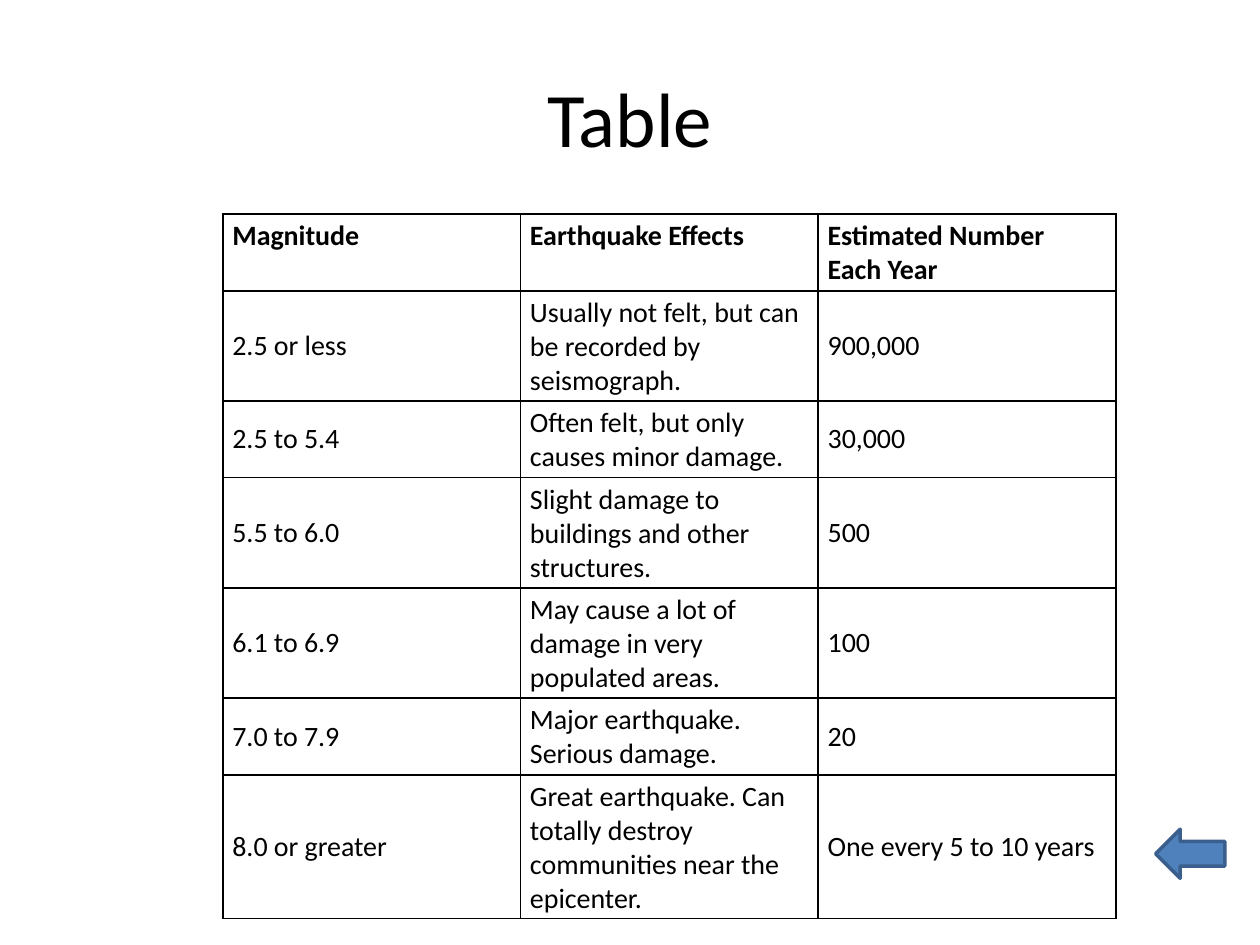
from dataclasses import dataclass

from lxml import etree
from pptx import Presentation
from pptx.dml.color import RGBColor
from pptx.enum import shapes, text
from pptx.oxml import ns
from pptx.util import Pt

FONT = "Calibri"
BLACK = "000000"
TABLE_LEFT, TABLE_TOP = 127.4, 122.4
COLUMN_WIDTH = 170.1
BORDER_WIDTH = 1


@dataclass
class EffectRow:
    magnitude: str
    effects: str
    yearly_count: str
    height: float
    header: bool = False


ROWS = [
    EffectRow("Magnitude", "Earthquake Effects", "Estimated Number\nEach Year", 39, header=True),
    EffectRow("2.5 or less", "Usually not felt, but can be recorded by seismograph.", "900,000", 56),
    EffectRow("2.5 to 5.4", "Often felt, but only causes minor damage.", "30,000", 39),
    EffectRow("5.5 to 6.0", "Slight damage to buildings and other structures.", "500", 56),
    EffectRow("6.1 to 6.9", "May cause a lot of damage in very populated areas.", "100", 56),
    EffectRow("7.0 to 7.9", "Major earthquake. Serious damage.", "20", 39),
    EffectRow("8.0 or greater", "Great earthquake. Can totally destroy communities near the epicenter.",
              "One every 5 to 10 years", 73),
]


def color(value: str) -> RGBColor:
    return RGBColor.from_string(value)


def add_text(paragraph, content: str, size: float, bold: bool = False) -> None:
    """Add one run per line, with line breaks between them."""
    for index, line in enumerate(content.split("\n")):
        if index:
            paragraph.add_line_break()
        run = paragraph.add_run()
        run.text = line
        run.font.name = FONT
        run.font.size = Pt(size)
        run.font.bold = bold
        run.font.color.rgb = color(BLACK)


def add_borders(cell) -> None:
    """Insert the four edge lines ahead of the cell's fill, as the schema orders them."""
    properties = cell._tc.get_or_add_tcPr()
    for position, edge in enumerate(("lnL", "lnR", "lnT", "lnB")):
        line = etree.Element(ns.qn(f"a:{edge}"), w=str(Pt(BORDER_WIDTH)))
        fill = etree.SubElement(line, ns.qn("a:solidFill"))
        etree.SubElement(fill, ns.qn("a:srgbClr"), val=BLACK)
        properties.insert(position, line)


def draw_title(slide, content: str) -> None:
    title = slide.shapes.add_textbox(Pt(36), Pt(21.6), Pt(648), Pt(90))
    frame = title.text_frame
    frame.word_wrap = True
    frame.vertical_anchor = text.MSO_ANCHOR.MIDDLE
    paragraph = frame.paragraphs[0]
    paragraph.alignment = text.PP_ALIGN.CENTER
    add_text(paragraph, content, 44)


def draw_cell(cell, content: str, header: bool) -> None:
    cell.margin_left = cell.margin_right = Pt(5.4)
    cell.margin_top = cell.margin_bottom = Pt(2.7)
    cell.vertical_anchor = text.MSO_ANCHOR.TOP if header else text.MSO_ANCHOR.MIDDLE
    cell.fill.background()
    add_borders(cell)
    add_text(cell.text_frame.paragraphs[0], content, 16, bold=header)


def draw_effects_table(slide, rows: list[EffectRow]) -> None:
    table = slide.shapes.add_table(
        len(rows), 3, Pt(TABLE_LEFT), Pt(TABLE_TOP),
        Pt(3 * COLUMN_WIDTH), Pt(sum(row.height for row in rows))).table
    table.first_row = table.horz_banding = False
    for column in table.columns:
        column.width = Pt(COLUMN_WIDTH)
    for index, row in enumerate(rows):
        table.rows[index].height = Pt(row.height)
        for column, content in enumerate((row.magnitude, row.effects, row.yearly_count)):
            draw_cell(table.cell(index, column), content, row.header)


def draw_back_arrow(slide) -> None:
    arrow = slide.shapes.add_shape(
        shapes.MSO_SHAPE.RIGHT_ARROW, Pt(660.3), Pt(473.8), Pt(39.6), Pt(28.1))
    arrow.rotation = 180
    arrow.shadow.inherit = False
    arrow.fill.solid()
    arrow.fill.fore_color.rgb = color("4F81BD")
    arrow.line.color.rgb = color("3A5F8C")
    arrow.line.width = Pt(2)


def main() -> None:
    presentation = Presentation()
    presentation.slide_width, presentation.slide_height = Pt(720), Pt(540)
    slide = presentation.slides.add_slide(presentation.slide_layouts[6])
    draw_title(slide, "Table")
    draw_effects_table(slide, ROWS)
    draw_back_arrow(slide)
    presentation.save("out.pptx")


if __name__ == "__main__":
    main()
